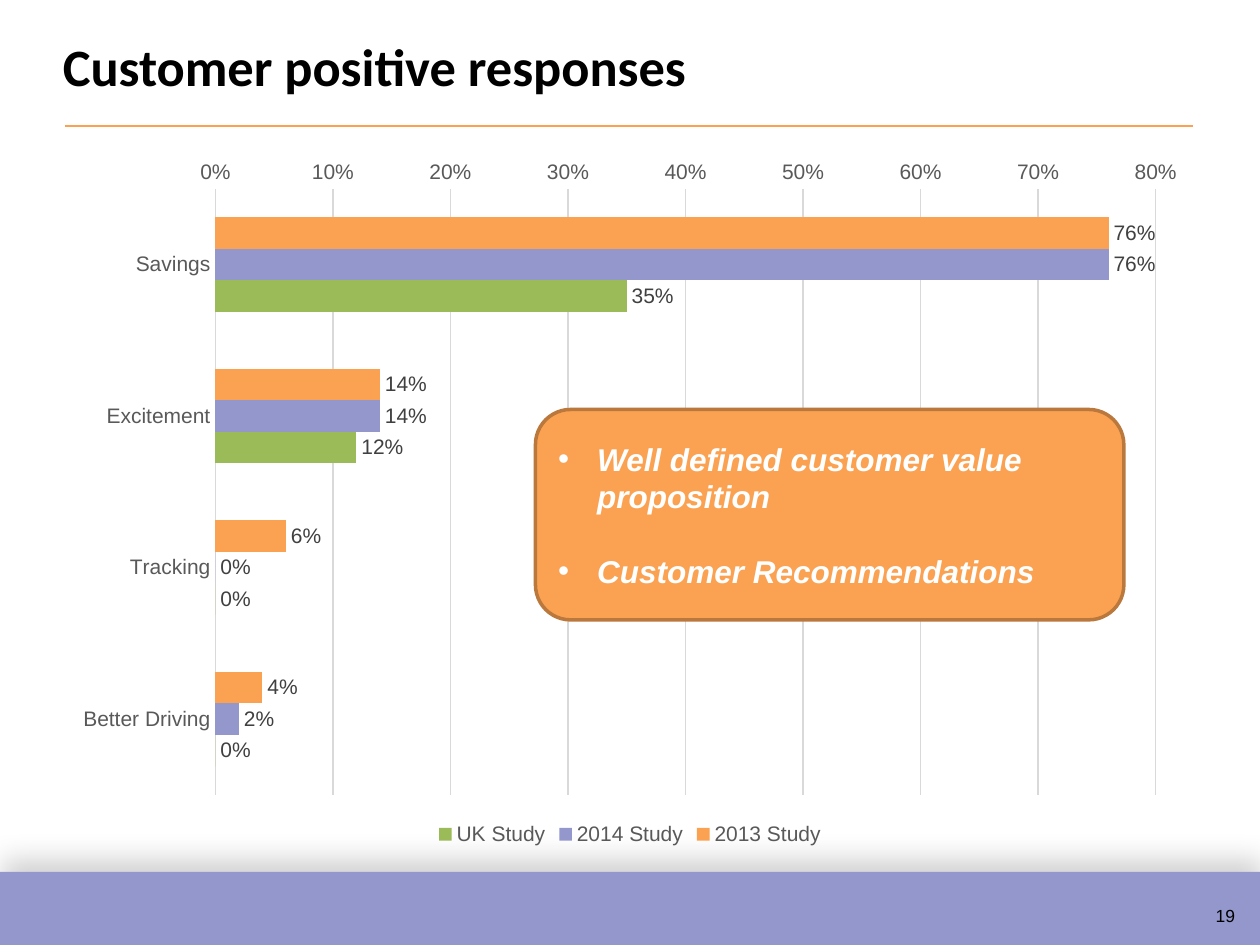
"""Build the customer positive responses slide."""
from dataclasses import dataclass
from typing import Any

from lxml import etree
from pptx import Presentation
from pptx.chart.data import CategoryChartData
from pptx.dml.color import RGBColor
from pptx.enum.chart import XL_CHART_TYPE, XL_LABEL_POSITION, XL_LEGEND_POSITION, XL_TICK_MARK
from pptx.enum.shapes import MSO_CONNECTOR, MSO_SHAPE
from pptx.enum.text import MSO_ANCHOR, PP_ALIGN
from pptx.oxml.ns import qn
from pptx.util import Inches, Pt

BLACK = RGBColor(0x00, 0x00, 0x00)
WHITE = RGBColor(0xFF, 0xFF, 0xFF)
ORANGE = RGBColor(0xFB, 0xA2, 0x52)
BROWN = RGBColor(0xBA, 0x78, 0x3D)
LILAC = RGBColor(0x94, 0x97, 0xCC)
GREEN = RGBColor(0x9B, 0xBB, 0x59)
GRID_GREY = RGBColor(0xD9, 0xD9, 0xD9)
AXIS_GREY = RGBColor(0x59, 0x59, 0x59)
LABEL_GREY = RGBColor(0x40, 0x40, 0x40)

BAR = XL_CHART_TYPE.BAR_CLUSTERED
OUTSIDE_END = XL_LABEL_POSITION.OUTSIDE_END
BOTTOM = XL_LEGEND_POSITION.BOTTOM
NO_TICK = XL_TICK_MARK.NONE
STRAIGHT = MSO_CONNECTOR.STRAIGHT
RECTANGLE = MSO_SHAPE.RECTANGLE
ROUNDED = MSO_SHAPE.ROUNDED_RECTANGLE
MIDDLE = MSO_ANCHOR.MIDDLE
LEFT = PP_ALIGN.LEFT

CATEGORIES = ["Savings", "Excitement", "Tracking", "Better Driving"]
STUDIES = [
    ("2013 Study", ORANGE, (0.76, 0.14, 0.06, 0.04)),
    ("2014 Study", LILAC, (0.76, 0.14, 0, 0.02)),
    ("UK Study", GREEN, (0.35, 0.12, 0, 0)),
]


@dataclass
class SlideBuilder:
    """Hold the current slide and its style."""
    slide: Any
    body_font: str = "Arial"
    title_font: str = "Calibri"

    def set_font(self, font, size, color, name=None, bold=False, italic=False):
        """Apply a complete font style."""
        font.name = name or self.body_font
        font.size = Pt(size)
        font.color.rgb = color
        font.bold = bold
        font.italic = italic

    def text(self, box, wording, size, name=None, bold=False, wrap=True):
        """Add a one-paragraph text box and return the paragraph."""
        frame = self.slide.shapes.add_textbox(*map(Inches, box)).text_frame
        frame.word_wrap = wrap
        paragraph = frame.paragraphs[0]
        paragraph.text = wording
        self.set_font(paragraph.font, size, BLACK, name, bold)
        return paragraph

    def panel(self, preset, box, fill, outline=None):
        """Add a filled shape, outlined if a colour is given."""
        panel = self.slide.shapes.add_shape(preset, *map(Inches, box))
        panel.shadow.inherit = False
        panel.fill.solid()
        panel.fill.fore_color.rgb = fill
        if outline is None:
            panel.line.fill.background()
        else:
            panel.line.color.rgb = outline
            panel.line.width = Pt(2)
        return panel

    def footer(self, box):
        """Add the footer band with its soft upward shadow."""
        band = self.panel(RECTANGLE, box, LILAC)
        effects = band._element.spPr.find(qn("a:effectLst"))
        shadow = etree.SubElement(
            effects, qn("a:outerShdw"), blurRad=str(Pt(16)), dist=str(Pt(8)),
            dir=str(277 * 60000), algn="b", rotWithShape="0")
        shade = etree.SubElement(shadow, qn("a:srgbClr"), val="000000")
        etree.SubElement(shade, qn("a:alpha"), val="19000")

    def rule(self, left, right, top):
        """Add a thin horizontal rule."""
        rule = self.slide.shapes.add_connector(
            STRAIGHT, Inches(left), Inches(top), Inches(right), Inches(top))
        rule.line.color.rgb = ORANGE
        rule.line.width = Pt(1)
        etree.SubElement(rule._element.spPr, qn("a:effectLst"))

    def callout(self, box, points):
        """Add a rounded panel with bulleted points."""
        frame = self.panel(ROUNDED, box, ORANGE, BROWN).text_frame
        frame.word_wrap = True
        frame.vertical_anchor = MIDDLE
        for index, point in enumerate(points):
            paragraph = frame.add_paragraph() if index else frame.paragraphs[0]
            paragraph.text = point
            paragraph.alignment = LEFT
            paragraph.space_before = Pt(21 if index else 0)
            self.set_font(paragraph.font, 18, WHITE, bold=True, italic=True)
            properties = paragraph._p.get_or_add_pPr()
            properties.set("marL", str(Inches(0.31)))
            properties.set("indent", str(Inches(-0.31)))
            bullet_font = etree.Element(qn("a:buFont"), typeface=self.body_font)
            bullet = etree.Element(qn("a:buChar"), char="•")
            properties.find(qn("a:defRPr")).addprevious(bullet_font)
            bullet_font.addnext(bullet)

    def bar_chart(self, box, categories, studies):
        """Add a clustered bar chart of percentages, first category on top."""
        data = CategoryChartData(number_format="0%")
        data.categories = categories
        for name, _, shares in studies:
            data.add_series(name, shares)
        chart = self.slide.shapes.add_chart(BAR, *map(Inches, box), data).chart
        chart.has_title = False
        self.set_font(chart.font, 10, BLACK)

        chart.has_legend = True
        chart.legend.position = BOTTOM
        chart.legend.include_in_layout = False
        self.set_font(chart.legend.font, 12, AXIS_GREY)

        for axis in (chart.category_axis, chart.value_axis):
            axis.major_tick_mark = axis.minor_tick_mark = NO_TICK
            self.set_font(axis.tick_labels.font, 12, AXIS_GREY)
        chart.category_axis.reverse_order = True
        shares_axis = chart.value_axis
        shares_axis.minimum_scale, shares_axis.maximum_scale = 0, 0.8
        shares_axis.major_unit = 0.1
        shares_axis.tick_labels.number_format = "0%"
        shares_axis.tick_labels.number_format_is_linked = False
        shares_axis.format.line.fill.background()
        for line in (chart.category_axis.format.line, shares_axis.major_gridlines.format.line):
            line.color.rgb = GRID_GREY
            line.width = Pt(0.75)

        plot = chart.plots[0]
        plot.vary_by_categories = False
        plot.gap_width = 182
        plot.overlap = 0
        for series, (_, color, _) in zip(plot.series, studies):
            series.format.fill.solid()
            series.format.fill.fore_color.rgb = color
            labels = series.data_labels
            labels.show_value = True
            labels.position = OUTSIDE_END
            labels.number_format = "0%"
            labels.number_format_is_linked = False
            self.set_font(labels.font, 12, LABEL_GREY)


def main():
    """Create and save the presentation."""
    presentation = Presentation()
    presentation.slide_width, presentation.slide_height = Inches(10), Inches(7.5)
    builder = SlideBuilder(presentation.slides.add_slide(presentation.slide_layouts[6]))
    builder.footer((0, 6.92, 10, 0.58))
    page_number = builder.text((9.55, 7.05, 0.37, 0.34), "19", 10, wrap=False)
    page_number.line_spacing = 1.5
    page_number.space_before = Pt(6)
    builder.rule(0.52, 9.47, 1)
    builder.bar_chart((0.48, 1.17, 9.04, 5.58), CATEGORIES, STUDIES)
    builder.text((0.4, 0.22, 9.15, 0.61), "Customer positive responses", 30,
                 builder.title_font, bold=True)
    builder.callout((4.25, 3.25, 4.67, 1.67),
                    ["Well defined customer value proposition", "Customer Recommendations"])
    presentation.save("out.pptx")


if __name__ == "__main__":
    main()
